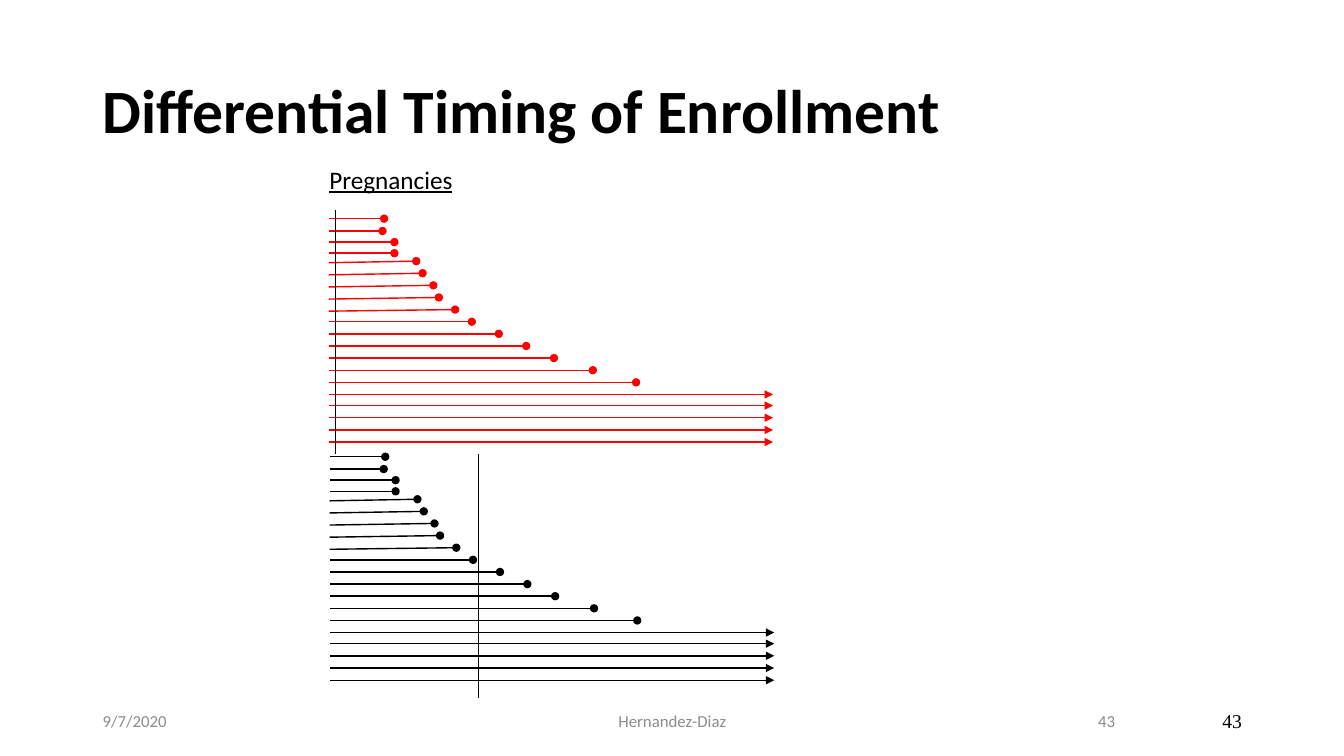
from dataclasses import dataclass

from lxml import etree
from pptx import Presentation
from pptx.dml.color import RGBColor
from pptx.enum.shapes import MSO_CONNECTOR
from pptx.enum.text import MSO_ANCHOR, PP_ALIGN
from pptx.oxml.ns import qn
from pptx.util import Cm, Pt

STRAIGHT = MSO_CONNECTOR.STRAIGHT
TOP, MIDDLE = MSO_ANCHOR.TOP, MSO_ANCHOR.MIDDLE
LEFT, CENTER, RIGHT = PP_ALIGN.LEFT, PP_ALIGN.CENTER, PP_ALIGN.RIGHT

COLORS = {
    "black": "000000",
    "red": "FF0000",
    "footer": "8C8C8C",
    "number": "898989",
}


@dataclass
class Label:
    text: str
    left: float
    top: float
    width: float
    height: float
    size: int
    color: str = "black"
    font: str = "Calibri"
    align: PP_ALIGN = LEFT
    anchor: MSO_ANCHOR = MIDDLE
    bold: bool = False
    underline: bool = False
    spacing: float = 1.0


@dataclass
class Cohort:
    color: str
    dx: float
    dy: float
    enrollment_x: float


FOOTER_TOP, FOOTER_HEIGHT = 17.65, 1.02
LABELS = [
    Label("Differential Timing of Enrollment", 2.34, 1.02, 29.21, 3.68, 44,
          bold=True, spacing=0.9),
    Label("Pregnancies", 8.05, 4.01, 7.62, 1.02, 18, anchor=TOP, underline=True),
    Label("9/7/2020", 2.34, FOOTER_TOP, 7.62, FOOTER_HEIGHT, 12, "footer"),
    Label("Hernandez-Diaz", 11.23, FOOTER_TOP, 11.43, FOOTER_HEIGHT, 12, "footer",
          align=CENTER),
    Label("43", 22.43, FOOTER_TOP, 5.92, FOOTER_HEIGHT, 12, "number", align=RIGHT),
    Label("43", 23.93, FOOTER_TOP, 7.62, FOOTER_HEIGHT, 14,
          font="Times New Roman", align=RIGHT),
]

COHORTS = [
    Cohort("black", 0.03, 6.0, 12.06),
    Cohort("red", 0, 0, 8.46),
]
START_X, TERM_X = 8.28, 19.48
LOSS_X = [9.68, 9.64, 9.94, 9.94, 10.49, 10.65, 10.92, 11.06, 11.47, 11.89,
          12.57, 13.26, 13.96, 14.94, 16.03]
TERM_COUNT = 5
END_Y = ([5.51, 5.82, 6.1, 6.38]
         + [6.58 + 3.36 * i / 11 for i in range(12)]
         + [10.22 + 0.92 * i / 3 for i in range(4)])
TILTED_ROWS, TILT = range(4, 9), 0.04
ENROLLMENT_TOP, ENROLLMENT_HEIGHT = 5.28, 6.15


def add_label(s, label: Label) -> None:
    box = s.shapes.add_textbox(Cm(label.left), Cm(label.top),
                               Cm(label.width), Cm(label.height))
    tf = box.text_frame
    tf.word_wrap = True
    tf.vertical_anchor = label.anchor
    p = tf.paragraphs[0]
    p.alignment = label.align
    p.line_spacing = label.spacing
    r = p.add_run()
    r.text = label.text
    r.font.name = label.font
    r.font.size = Pt(label.size)
    r.font.bold = label.bold
    r.font.underline = label.underline
    r.font.color.rgb = RGBColor.from_string(COLORS[label.color])


def add_line(group, x1: float, y1: float, x2: float, y2: float,
             color: str, tail: str = "none") -> None:
    line = group.shapes.add_connector(STRAIGHT, Cm(x1), Cm(y1), Cm(x2), Cm(y2))
    line.line.width = Pt(1)
    line.line.color.rgb = RGBColor.from_string(COLORS[color])
    etree.SubElement(line.line._get_or_add_ln(), qn("a:tailEnd"), type=tail)
    etree.SubElement(line._element.spPr, qn("a:effectLst"))


def add_cohort(s, cohort: Cohort) -> None:
    group = s.shapes.add_group_shape()
    ends = ([(x, "oval") for x in LOSS_X]
            + [(TERM_X, "triangle")] * TERM_COUNT)
    for row, ((x, tail), y) in enumerate(zip(ends, END_Y)):
        tilt = TILT if row in TILTED_ROWS else 0
        add_line(group, START_X + cohort.dx, y + tilt + cohort.dy,
                 x + cohort.dx, y + cohort.dy, cohort.color, tail)
    top = ENROLLMENT_TOP + cohort.dy + (0.15 if cohort.dy else 0)
    add_line(group, cohort.enrollment_x, top,
             cohort.enrollment_x, top + ENROLLMENT_HEIGHT, "black")


def main() -> None:
    prs = Presentation()
    prs.slide_width, prs.slide_height = Cm(33.87), Cm(19.05)
    s = prs.slides.add_slide(prs.slide_layouts[6])
    for cohort in COHORTS:
        add_cohort(s, cohort)
    for label in LABELS:
        add_label(s, label)
    prs.save("out.pptx")


if __name__ == "__main__":
    main()
